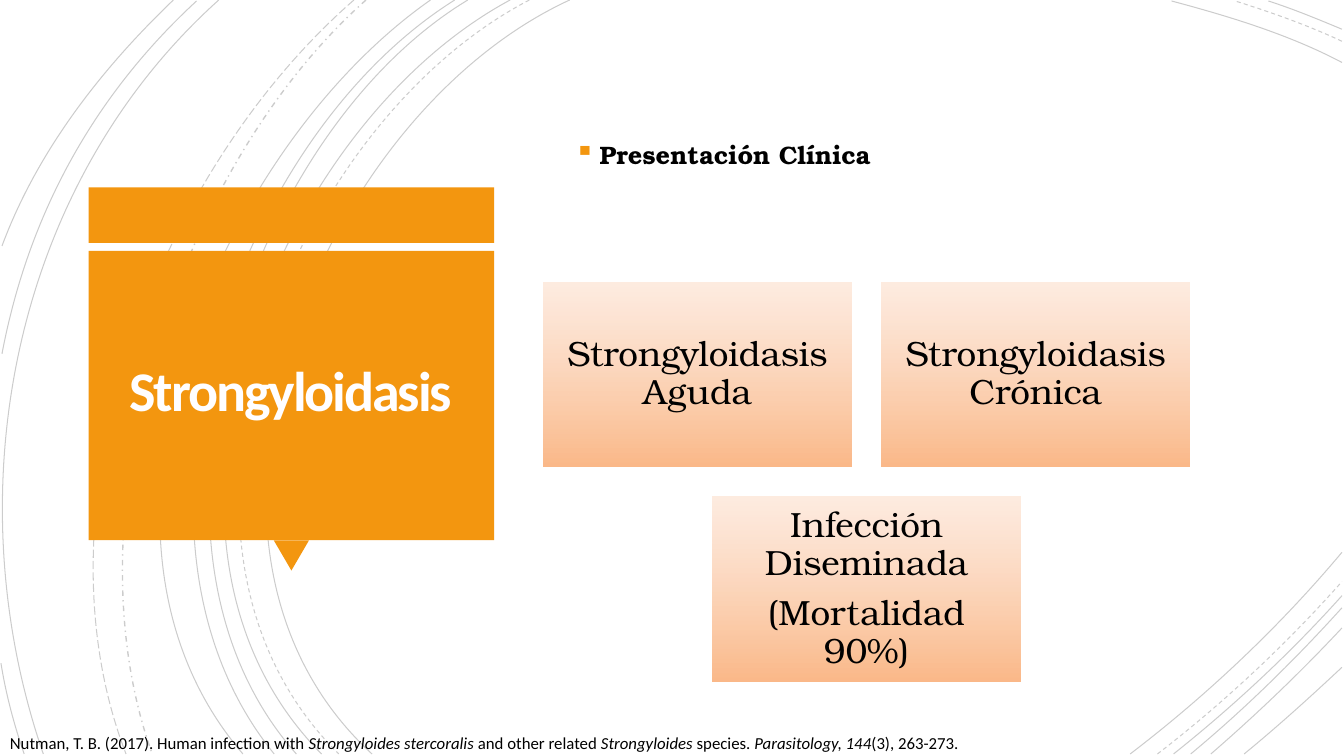
import lxml.etree
import pptx
import pptx.dml.color
import pptx.enum.dml
import pptx.enum.shapes
import pptx.enum.text
import pptx.oxml.ns
import pptx.util

COLUMNS, ROWS = 13.33, 7.5
UNIT = pptx.util.Inches(1)
BLACK = pptx.dml.color.RGBColor(0x00, 0x00, 0x00)
WHITE = pptx.dml.color.RGBColor(0xFF, 0xFE, 0xFF)
ORANGE = pptx.dml.color.RGBColor(0xF3, 0x96, 0x0F)
PALE_PEACH = pptx.dml.color.RGBColor(0xFD, 0xDF, 0xCC)
PEACH = pptx.dml.color.RGBColor(0xFB, 0xB3, 0x7F)
SANS, SERIF = "Calibri", "TeX Gyre Bonum"
CENTER = pptx.enum.text.PP_ALIGN.CENTER
MIDDLE = pptx.enum.text.MSO_ANCHOR.MIDDLE
SHAPES = pptx.enum.shapes.MSO_SHAPE
DASHES = pptx.enum.dml.MSO_LINE

LEFT_BOTTOM, RIGHT = 7.48, 13.31
ARCS = [
    (DASHES.SOLID, [
        [(5.65, 0), (3.15, 1.15), (1.43, 5.4), (3.69, LEFT_BOTTOM)],
        [(RIGHT, 0.62), (12.78, 0.34), (12.18, 0.16), (11.62, 0.01)],
        [(11.21, LEFT_BOTTOM), (11.97, 6.9), (12.69, 6.22), (RIGHT, 5.48)],
        [(5.06, 0), (2.7, 1.27), (1.1, 5.37), (3.19, LEFT_BOTTOM)],
        [(RIGHT, 0.29), (13.07, 0.19), (12.83, 0.09), (12.58, 0.01)],
        [(11.64, LEFT_BOTTOM), (12.23, 7.01), (12.8, 6.48), (RIGHT, 5.91)],
        [(4.64, 0), (2.44, 1.33), (1.1, 5.41), (2.94, LEFT_BOTTOM)],
        [(11.81, LEFT_BOTTOM), (12.34, 7.04), (12.84, 6.55), (RIGHT, 6.03)],
        [(4.51, 0), (2.31, 1.38), (0.97, 5.33), (2.72, LEFT_BOTTOM)],
        [(12.01, LEFT_BOTTOM), (12.46, 7.09), (12.9, 6.67), (RIGHT, 6.23)],
        [(4.27, 0), (2.17, 1.47), (0.53, 5.29), (2.41, LEFT_BOTTOM)],
        [(12.34, LEFT_BOTTOM), (12.67, 7.21), (12.99, 6.92), (RIGHT, 6.62)],
        [(2.17, 0), (0.11, 1.85), (-0.46, 4.9), (0.43, LEFT_BOTTOM)],
        [(1.95, 0.01), (0.92, 0.96), (0.28, 2.14), (0.02, 3.51)],
        [(0.01, 6.58), (0.06, 6.89), (0.14, 7.19), (0.24, LEFT_BOTTOM)],
        [(1.72, 0), (1, 0.69), (0.37, 1.5), (0.02, 2.44)]]),
    (DASHES.DASH, [
        [(5.25, 0), (2.85, 1.25), (1.23, 5.37), (3.36, LEFT_BOTTOM)],
        [(RIGHT, 0.41), (12.97, 0.25), (12.6, 0.12), (12.25, 0.01)],
        [(11.48, LEFT_BOTTOM), (12.13, 6.98), (12.75, 6.4), (RIGHT, 5.77)]]),
    (DASHES.DASH_DOT, [
        [(3.63, 0), (1.76, 1.66), (0.65, 5.09), (1.51, LEFT_BOTTOM)]]),
    (DASHES.LONG_DASH, [
        [(3.51, 0), (1.57, 1.69), (0.29, 4.99), (1.25, LEFT_BOTTOM)]]),
]
CARDS = [
    (0, 0, ["Strongyloidasis Aguda"]),
    (1, 0, ["Strongyloidasis Crónica"]),
    (0.5, 1, ["Infección Diseminada", "(Mortalidad 90%)"]),
]
CITATION = [
    ("Nutman, T. B. (2017). Human infection with ", False),
    ("Strongyloides stercoralis", True),
    (" and other related ", False),
    ("Strongyloides", True),
    (" species. ", False),
    ("Parasitology, 144", True),
    ("(3), 263-273.", False),
]


def to_emu(*lengths):
    """Turn grid lengths into slide units."""
    return [round(length * UNIT) for length in lengths]


def apply_format(target, values):
    """Set every attribute named in a dict of format values."""
    for name, value in values.items():
        setattr(target, name, value)


def add_element(parent, tag, **attributes):
    """Append a drawing element with its attributes."""
    return lxml.etree.SubElement(parent, pptx.oxml.ns.qn(tag), attributes)


def set_opacity(element, *percentages):
    """Give each colour inside an element its opacity."""
    for color, percentage in zip(element.xpath(".//a:srgbClr"), percentages):
        add_element(color, "a:alpha", val=str(percentage * 1000))


def margins(size):
    """Return equal insets as format values."""
    return {f"margin_{side}": round(size * UNIT) for side in ("left", "top", "right", "bottom")}


def write_text(shape, paragraphs, frame_format, paragraph_format, font_format, color):
    """Write paragraphs, each a list of (text, italic) runs, into a shape."""
    frame = shape.text_frame
    apply_format(frame, {"word_wrap": True, **frame_format})
    for index, runs in enumerate(paragraphs):
        paragraph = frame.add_paragraph() if index else frame.paragraphs[0]
        apply_format(paragraph, paragraph_format)
        for text, italic in runs:
            run = paragraph.add_run()
            run.text = text
            apply_format(run.font, {**font_format, "italic": italic})
            run.font.color.rgb = color


def add_block(slide, kind, box):
    """Add a flat orange shape without outline or shadow."""
    shape = slide.shapes.add_shape(kind, *to_emu(*box))
    shape.shadow.inherit = False
    shape.fill.solid()
    shape.fill.fore_color.rgb = ORANGE
    shape.line.fill.background()
    return shape


def add_arc(slide, points, dash):
    """Draw one faint curve from a start, two control points and an end."""
    start, *others = [to_emu(*point) for point in points]
    builder = slide.shapes.build_freeform(*start)
    builder.add_line_segments(others, close=False)
    arc = builder.convert_to_shape()
    arc.shadow.inherit = False
    arc.fill.background()
    arc.line.color.rgb = BLACK
    width = 1 if dash == DASHES.DASH_DOT else 0.75
    apply_format(arc.line, {"width": pptx.util.Pt(width), "dash_style": dash})
    set_opacity(arc.element, 20)
    segments = arc.element.xpath(".//a:lnTo")
    curve = add_element(segments[0].getparent(), "a:cubicBezTo")
    for segment in segments:
        curve.append(segment[0])
        segment.getparent().remove(segment)


def add_background(slide):
    """Draw the sweeping curves behind the content."""
    for dash, arcs in ARCS:
        for points in arcs:
            add_arc(slide, points, dash)


def add_title_panel(slide, box, text):
    """Build the orange callout and put the title in it."""
    left, top, width, height = box
    panel_top, panel_height = top + 0.63, 2.87
    pointer_width, pointer_height = 0.35, height - 0.63 - panel_height
    pointer_left = left + (width - pointer_width) / 2
    add_block(slide, SHAPES.RECTANGLE, (left, top, width, 0.55))
    pointer = add_block(slide, SHAPES.ISOSCELES_TRIANGLE,
                        (pointer_left, panel_top + panel_height, pointer_width, pointer_height))
    pointer.rotation = 180
    add_block(slide, SHAPES.RECTANGLE, (left, panel_top, width, panel_height))
    title = slide.shapes.title
    title_box = to_emu(left + 0.09, panel_top + 0.08, width - 0.19, panel_height - 0.18)
    apply_format(title, dict(zip(("left", "top", "width", "height"), title_box)))
    write_text(title, [[(text, False)]], {"vertical_anchor": MIDDLE, **margins(0.25)},
               {"alignment": CENTER, "line_spacing": 0.85},
               {"name": SANS, "size": pptx.util.Pt(40), "bold": True}, WHITE)
    for run in title.text_frame.paragraphs[0].runs:
        run.font._element.set("spc", "-150")
    title.element.getparent().append(title.element)


def add_heading(slide, box, text):
    """Add the bulleted heading above the cards."""
    heading = slide.shapes.add_textbox(*to_emu(*box))
    properties = heading.text_frame.paragraphs[0]._p.get_or_add_pPr()
    indent = round(0.25 * UNIT)
    properties.set("marL", str(indent))
    properties.set("indent", str(-indent))
    add_element(add_element(properties, "a:buClr"), "a:srgbClr", val=str(ORANGE))
    add_element(properties, "a:buSzPct", val="110000")
    add_element(properties, "a:buChar", char="▪")
    write_text(heading, [[(text, False)]], {"vertical_anchor": MIDDLE}, {"line_spacing": 1.2},
               {"name": SERIF, "size": pptx.util.Pt(18), "bold": True}, BLACK)


def add_cards(slide, box):
    """Lay out the gradient cards on a two by two grid."""
    left, top, width, height = box
    gap = 0.3
    card_width, card_height = (width - gap) / 2, (height - gap) / 2
    for column, row, texts in CARDS:
        card_box = (left + column * (card_width + gap), top + row * (card_height + gap),
                    card_width, card_height)
        card = add_block(slide, SHAPES.RECTANGLE, card_box)
        card.fill.gradient()
        card.fill.gradient_angle = 270
        for stop, position, color in zip(card.fill.gradient_stops, (0, 1), (PALE_PEACH, PEACH)):
            stop.position = position
            stop.color.rgb = color
        set_opacity(card.element, 60, 92)
        write_text(card, [[(text, False)] for text in texts],
                   {"vertical_anchor": MIDDLE, **margins(0.1)},
                   {"alignment": CENTER, "line_spacing": 0.9, "space_after": pptx.util.Pt(8.75)},
                   {"name": SERIF, "size": pptx.util.Pt(25)}, BLACK)


def add_citation(slide, box):
    """Add the reference line at the foot of the slide."""
    citation = slide.shapes.add_textbox(*to_emu(*box))
    write_text(citation, [CITATION],
               {"auto_size": pptx.enum.text.MSO_AUTO_SIZE.SHAPE_TO_FIT_TEXT}, {},
               {"name": SANS, "size": pptx.util.Pt(12)}, BLACK)


def main():
    """Build and save the slide."""
    presentation = pptx.Presentation()
    presentation.slide_width, presentation.slide_height = to_emu(COLUMNS, ROWS)
    slide = presentation.slides.add_slide(presentation.slide_layouts[5])
    add_background(slide)
    add_title_panel(slide, (0.88, 1.86, 4.02, 3.8), "Strongyloidasis")
    add_heading(slide, (5.6, 0.88, 6.87, 1.24), "Presentación Clínica")
    add_cards(slide, (5.39, 2.8, 6.41, 3.96))
    add_citation(slide, (0, 7.22, 12.7, 0.3))
    presentation.save("out.pptx")


if __name__ == "__main__":
    main()
